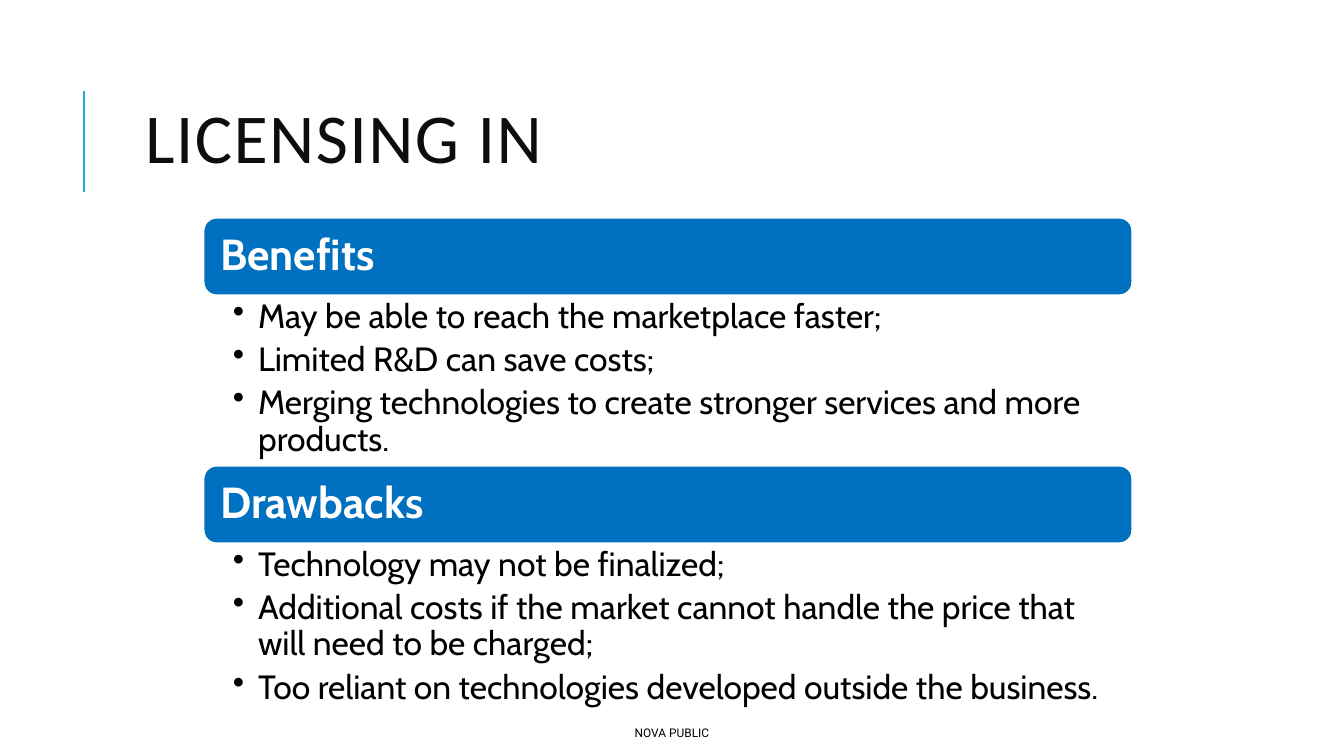
from lxml import etree
from pptx import Presentation
from pptx.dml.color import RGBColor
from pptx.enum.shapes import MSO_CONNECTOR, MSO_SHAPE
from pptx.enum.text import MSO_ANCHOR, MSO_AUTO_SIZE, PP_ALIGN
from pptx.oxml.ns import qn
from pptx.util import Inches, Pt

ROUNDED = MSO_SHAPE.ROUNDED_RECTANGLE
STRAIGHT = MSO_CONNECTOR.STRAIGHT
TOP, MIDDLE = MSO_ANCHOR.TOP, MSO_ANCHOR.MIDDLE
LEFT, CENTER = PP_ALIGN.LEFT, PP_ALIGN.CENTER
NO_FIT = MSO_AUTO_SIZE.NONE

BLACK = RGBColor(0x00, 0x00, 0x00)
WHITE = RGBColor(0xFF, 0xFF, 0xFF)
INK = RGBColor(0x0D, 0x0D, 0x0D)
ACCENT = RGBColor(0x1C, 0xAD, 0xE4)
BLUE = RGBColor(0x00, 0x70, 0xC0)

WIDTH, HEIGHT = Inches(13.33), Inches(7.5)
SECTION_LEFT, SECTION_WIDTH = 15.15, 69.1
SECTION_TOP, SECTION_PITCH = 28.8, 32.8
HEADING_HEIGHT, POINTS_HEIGHT = 10.27, 22.5

SECTIONS = [
    ("Benefits", [
        "May be able to reach the marketplace faster;",
        "Limited R&D can save costs;",
        "Merging technologies to create stronger services and more products.",
    ]),
    ("Drawbacks", [
        "Technology may not be finalized;",
        "Additional costs if the market cannot handle the price that will need to be charged;",
        "Too reliant on technologies developed outside the business.",
    ]),
]


def across(percent):
    return round(WIDTH * percent / 100)


def down(percent):
    return round(HEIGHT * percent / 100)


def box(left, top, width, height):
    return across(left), down(top), across(width), down(height)


def set_frame(frame, anchor, left=0.1, top=0.05, right=0.1, bottom=0.05):
    frame.word_wrap = True
    frame.auto_size = NO_FIT
    frame.vertical_anchor = anchor
    frame.margin_left, frame.margin_right = Inches(left), Inches(right)
    frame.margin_top, frame.margin_bottom = Inches(top), Inches(bottom)


def write(paragraph, text, font, size, color, align=LEFT, spacing=1.0, bold=False):
    paragraph.alignment = align
    paragraph.line_spacing = spacing
    run = paragraph.add_run()
    run.text = text
    run.font.name, run.font.size, run.font.bold = font, Pt(size), bold
    run.font.color.rgb = color
    return run


def add_bullet(paragraph):
    properties = paragraph._p.get_or_add_pPr()
    properties.set("marL", str(Inches(0.25)))
    properties.set("indent", str(Inches(-0.25)))
    etree.SubElement(properties, qn("a:buChar")).set("char", "•")


def add_title(slide, text):
    title = slide.shapes.title
    title.left, title.top, title.width, title.height = box(10.05, 10.67, 67.5, 16.67)
    set_frame(title.text_frame, MIDDLE)
    run = write(title.text_frame.paragraphs[0], text, "Calibri", 50, INK, spacing=0.8)
    run.font._element.set("spc", "100")


def add_title_rule(slide):
    x = across(6.25)
    rule = slide.shapes.add_connector(STRAIGHT, x, down(25.4), x, down(12))
    rule.line.color.rgb = ACCENT
    rule.line.width = Pt(1.5)
    etree.SubElement(rule._element.spPr, qn("a:effectLst"))


def add_heading(slide, top, text):
    bar = slide.shapes.add_shape(
        ROUNDED, *box(SECTION_LEFT, top, SECTION_WIDTH, HEADING_HEIGHT))
    bar.shadow.inherit = False
    bar.fill.solid()
    bar.fill.fore_color.rgb = BLUE
    bar.line.color.rgb = WHITE
    bar.line.width = Pt(1.25)
    set_frame(bar.text_frame, MIDDLE, left=0.13, right=0.13)
    write(bar.text_frame.paragraphs[0], text, "Cabin", 31, WHITE, spacing=0.9, bold=True)


def add_points(slide, top, points):
    frame = slide.shapes.add_textbox(
        *box(SECTION_LEFT, top, SECTION_WIDTH, POINTS_HEIGHT)).text_frame
    set_frame(frame, TOP, left=0.29, top=0.04, right=0.24, bottom=0.04)
    for index, point in enumerate(points):
        paragraph = frame.add_paragraph() if index else frame.paragraphs[0]
        write(paragraph, point, "Cabin", 24, BLACK, spacing=0.9)
        paragraph.space_after = Pt(5)
        add_bullet(paragraph)


def add_footer(slide, text):
    frame = slide.shapes.add_textbox(*box(0, 95.33, 100, 3.2)).text_frame
    set_frame(frame, TOP)
    write(frame.paragraphs[0], text, "Roboto", 8.5, BLACK, align=CENTER)


def main():
    deck = Presentation()
    deck.slide_width, deck.slide_height = WIDTH, HEIGHT
    slide = deck.slides.add_slide(deck.slide_layouts.get_by_name("Title Only"))
    add_title_rule(slide)
    add_footer(slide, "NOVA PUBLIC")
    add_title(slide, "LICENSING IN")
    for index, (heading, points) in enumerate(SECTIONS):
        top = SECTION_TOP + index * SECTION_PITCH
        add_heading(slide, top, heading)
        add_points(slide, top + HEADING_HEIGHT, points)
    deck.save("out.pptx")


if __name__ == "__main__":
    main()
